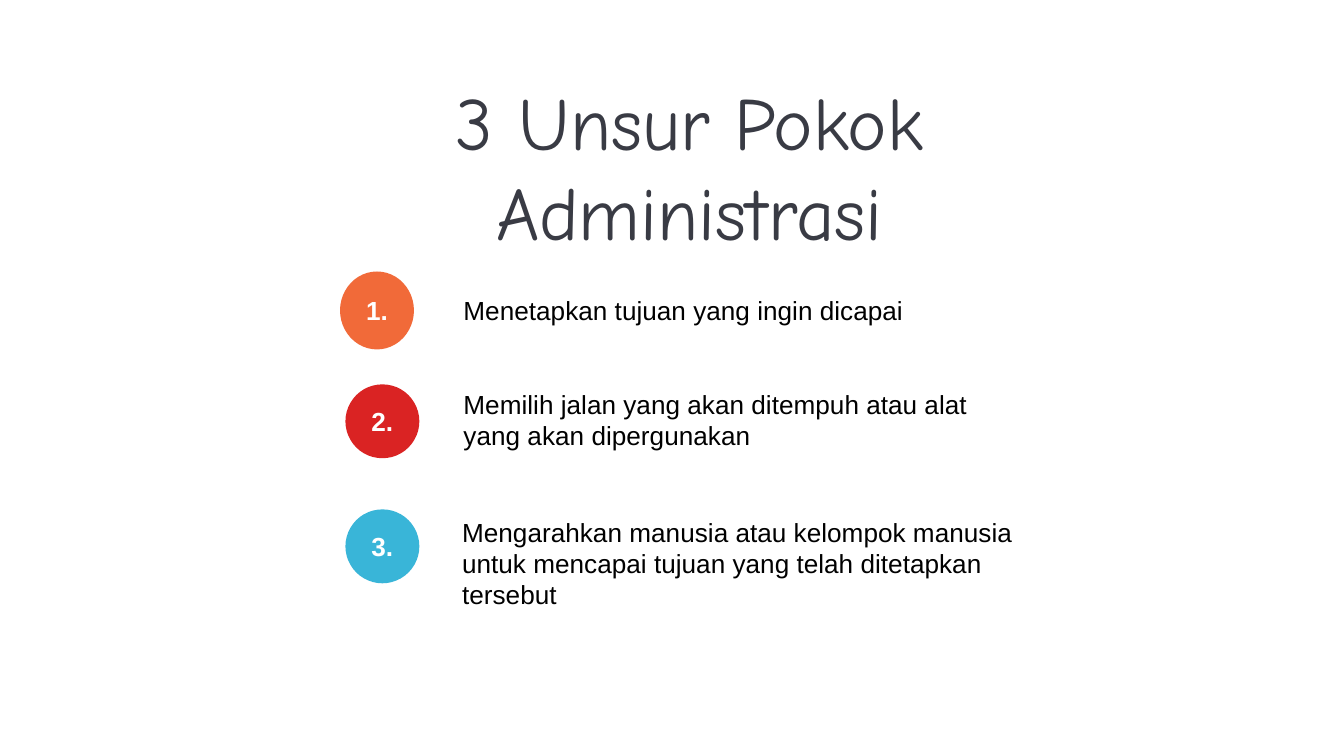
from pptx import Presentation
from pptx.dml.color import RGBColor
from pptx.enum.shapes import MSO_SHAPE as Shape
from pptx.enum.text import MSO_ANCHOR as Anchor, MSO_AUTO_SIZE as AutoSize, PP_ALIGN as Align
from pptx.util import Inches, Pt

COLORS = {
    "title": "393B44", "body": "000000", "number": "FFFFFF",
    "orange": "F16A39", "red": "DA2323", "blue": "39B5D8",
}
TITLE = "3 Unsur Pokok Administrasi"
# colour, badge (left, top, width, height), text (left, top, width, height), wrap, lines
ELEMENTS = [
    ("orange", (2.53, 2.02, 0.55, 0.58), (3.35, 2.14, 3.49, 0.34), False,
     ["Menetapkan tujuan yang ingin dicapai"]),
    ("red", (2.57, 2.86, 0.55, 0.55), (3.35, 2.84, 4.25, 0.57), True,
     ["Memilih jalan yang akan ditempuh atau alat yang akan dipergunakan"]),
    ("blue", (2.57, 3.79, 0.55, 0.55), (3.34, 3.79, 4.37, 0.81), True,
     ["Mengarahkan manusia atau kelompok manusia",
      "untuk mencapai tujuan yang telah ditetapkan",
      "tersebut"]),
]


def rgb(name):
    return RGBColor.from_string(COLORS[name])


def write(frame, lines, color, size=14, font="Arial", bold=False, align=Align.LEFT):
    """Fill a text frame with one paragraph per line."""
    for index, line in enumerate(lines):
        para = frame.add_paragraph() if index else frame.paragraphs[0]
        para.alignment = align
        span = para.add_run()
        span.text = line
        span.font.name, span.font.size, span.font.bold = font, Pt(size), bold
        span.font.color.rgb = rgb(color)


def add_text(slide, place, wrap=True, fit=AutoSize.SHAPE_TO_FIT_TEXT):
    frame = slide.shapes.add_textbox(*map(Inches, place)).text_frame
    frame.word_wrap = wrap
    frame.auto_size = fit
    return frame


def add_badge(slide, place, color, number):
    badge = slide.shapes.add_shape(Shape.OVAL, *map(Inches, place))
    badge.shadow.inherit = False
    badge.fill.solid()
    badge.fill.fore_color.rgb = rgb(color)
    badge.line.fill.background()
    badge.text_frame.vertical_anchor = Anchor.MIDDLE
    write(badge.text_frame, [f"{number}."], "number", bold=True, align=Align.CENTER)


def main():
    deck = Presentation()
    deck.slide_width = Inches(10)
    deck.slide_height = deck.slide_width * 9 // 16
    slide = deck.slides.add_slide(deck.slide_layouts[6])

    title = add_text(slide, (2.24, 1, 5.78, 0.9), fit=AutoSize.NONE)
    title.margin_left = title.margin_right = title.margin_top = title.margin_bottom = 0
    title.vertical_anchor = Anchor.BOTTOM
    write(title, [TITLE], "title", size=40, font="Comic Neue", align=Align.CENTER)

    for number, (color, badge, text, wrap, lines) in enumerate(ELEMENTS, start=1):
        add_badge(slide, badge, color, number)
        write(add_text(slide, text, wrap), lines, "body")

    deck.save("out.pptx")


if __name__ == "__main__":
    main()
